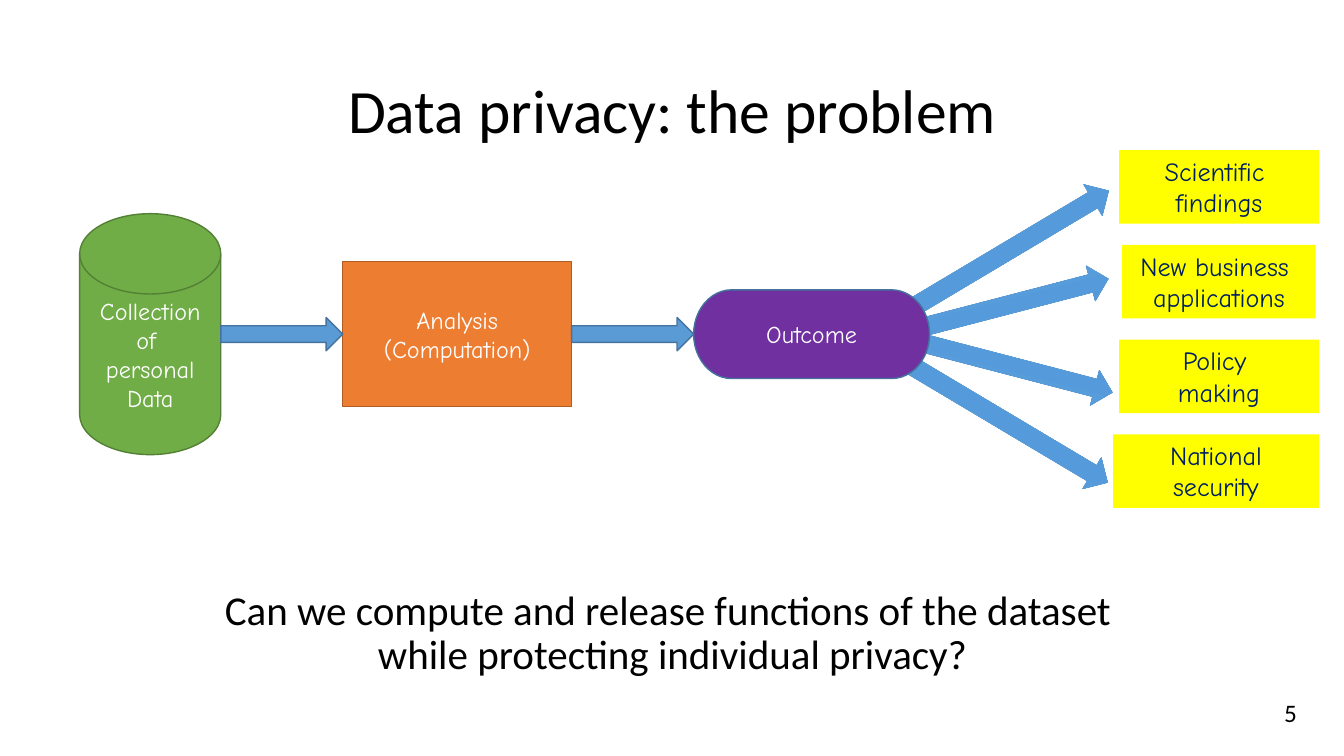
from copy import deepcopy

from pptx import Presentation
from pptx import util as u
from pptx.dml.color import RGBColor
from pptx.enum import shapes, text
from pptx.oxml.ns import qn
from pptx.oxml.xmlchemy import OxmlElement

# Content: "\v" is a line break, "\n" a new paragraph
TITLE = "Data privacy: the problem"
QUESTION = ("Can we compute and release functions of the dataset \v"
            "while protecting individual privacy?")
PAGE = "5"
KIND = shapes.MSO_SHAPE
# Label, shape, left, width, height, fill, line
STAGES = [
    ("Collection of \vpersonal Data", KIND.FLOWCHART_MAGNETIC_DISK,
     0.79, 1.4, 2.39, "70AD47", "538035"),
    ("Analysis\n(Computation)", KIND.FLOWCHART_PROCESS,
     3.4, 2.27, 1.44, "ED7D31", "AF5C24"),
    ("Outcome", KIND.FLOWCHART_TERMINATOR,
     6.88, 2.34, 0.88, "7030A0", "43739E"),
]
# Label, left, width, wraps
USES = [
    ("Scientific \nfindings", 11.1, 1.98, True),
    ("New business \vapplications", 11.13, 1.92, False),
    ("Policy \vmaking", 11.1, 1.98, True),
    ("National\vsecurity", 11.04, 2.04, True),
]
# Left, top, rotation, flipped
FAN = [(8.83, 2.31, -30.8, False), (8.7, 2.88, -14.6, False),
       (8.74, 3.42, 14.6, True), (8.82, 4.01, 30.8, True)]
FAN_STOPS = [(0, "71A6DB"), (0.5, "559BDB"), (1, "448ACA")]
FLOW_MIDDLE = 3.315
USES_TOP, USES_STEP = 1.49, 0.94


def colour(value):
    return RGBColor.from_string(value)


def place(shape, left, top, width, height):
    shape.left, shape.top = u.Inches(left), u.Inches(top)
    shape.width, shape.height = u.Inches(width), u.Inches(height)


def write(shape, words, size, font, ink, anchor, wrap=True):
    frame = shape.text_frame
    frame.text = words
    frame.word_wrap = wrap
    frame.auto_size = text.MSO_AUTO_SIZE.NONE
    frame.vertical_anchor = anchor
    for paragraph in frame.paragraphs:
        paragraph.alignment = text.PP_ALIGN.CENTER
        for run in paragraph.runs:
            run.font.size = u.Pt(size)
            run.font.name = font
            run.font.color.rgb = colour(ink)


def add_block(kind, left, top, width, height, fill=None, line=None, weight=1):
    shape = slide.shapes.add_shape(kind, *map(u.Inches, (left, top, width, height)))
    shape.shadow.inherit = False
    if fill:
        shape.fill.solid()
        shape.fill.fore_color.rgb = colour(fill)
    if line:
        shape.line.color.rgb = colour(line)
        shape.line.width = u.Pt(weight)
    else:
        shape.line.fill.background()
    return shape


def shade(shape, stops):
    shape.fill.gradient()
    shape.fill.gradient_angle = 270
    stop_list = shape._element.spPr.find(".//" + qn("a:gsLst"))
    stop_list.insert(1, deepcopy(stop_list[0]))
    for stop, (position, value) in zip(shape.fill.gradient_stops, stops):
        stop.position = position
        stop.color.rgb = colour(value)


presentation = Presentation()
presentation.slide_width = u.Inches(13.33)
presentation.slide_height = u.Inches(7.5)
slide = presentation.slides.add_slide(presentation.slide_layouts[1])
TOP, MIDDLE = text.MSO_ANCHOR.TOP, text.MSO_ANCHOR.MIDDLE

# Title and question
title, question = slide.placeholders
place(title, 0.92, 0.4, 11.5, 1.45)
write(title, TITLE, 44, "Calibri", "000000", MIDDLE)
place(question, 0.92, 5.8, 11.5, 1.31)
write(question, QUESTION, 29.3, "Calibri", "000000", TOP)
for placeholder in (title, question):
    paragraph = placeholder.text_frame.paragraphs[0]
    paragraph.line_spacing = 0.9
    paragraph.space_before = u.Pt(0)
properties = question.text_frame.paragraphs[0]._p.get_or_add_pPr()
properties.set("marL", "0")
properties.set("indent", "0")
properties.append(OxmlElement("a:buNone"))

# Arrows fanning out from behind the outcome
for left, top, rotation, flipped in FAN:
    arrow = add_block(KIND.RIGHT_ARROW, left, top, 2.33, 0.36,
                      line="5B9BD5", weight=0.5)
    shade(arrow, FAN_STOPS)
    arrow.rotation = rotation
    if flipped:
        arrow._element.spPr.xfrm.set("flipV", "1")

# Uses of the outcome
for row, (label, left, width, wraps) in enumerate(USES):
    use = add_block(KIND.RECTANGLE, left, USES_TOP + row * USES_STEP,
                    width, 0.73, "FFFF00")
    write(use, label, 18.7, "Comic Neue", "002060", TOP, wraps)

# Stages along the middle line
for label, kind, left, width, height, fill, line in STAGES:
    stage = add_block(kind, left, FLOW_MIDDLE - height / 2, width, height, fill, line)
    write(stage, label, 17.3, "Comic Neue", "FFFFFF", MIDDLE)

# Arrows filling the gaps between stages
for before, after in zip(STAGES, STAGES[1:]):
    start = before[2] + before[3]
    add_block(KIND.RIGHT_ARROW, start, FLOW_MIDDLE - 0.165,
              after[2] - start, 0.33, "5B9BD5", "43739E")

# Page number
number = slide.shapes.add_textbox(*map(u.Inches, (12.49, 6.87, 0.62, 0.41)))
write(number, PAGE, 18, "Calibri", "000000", TOP)

presentation.save("out.pptx")
